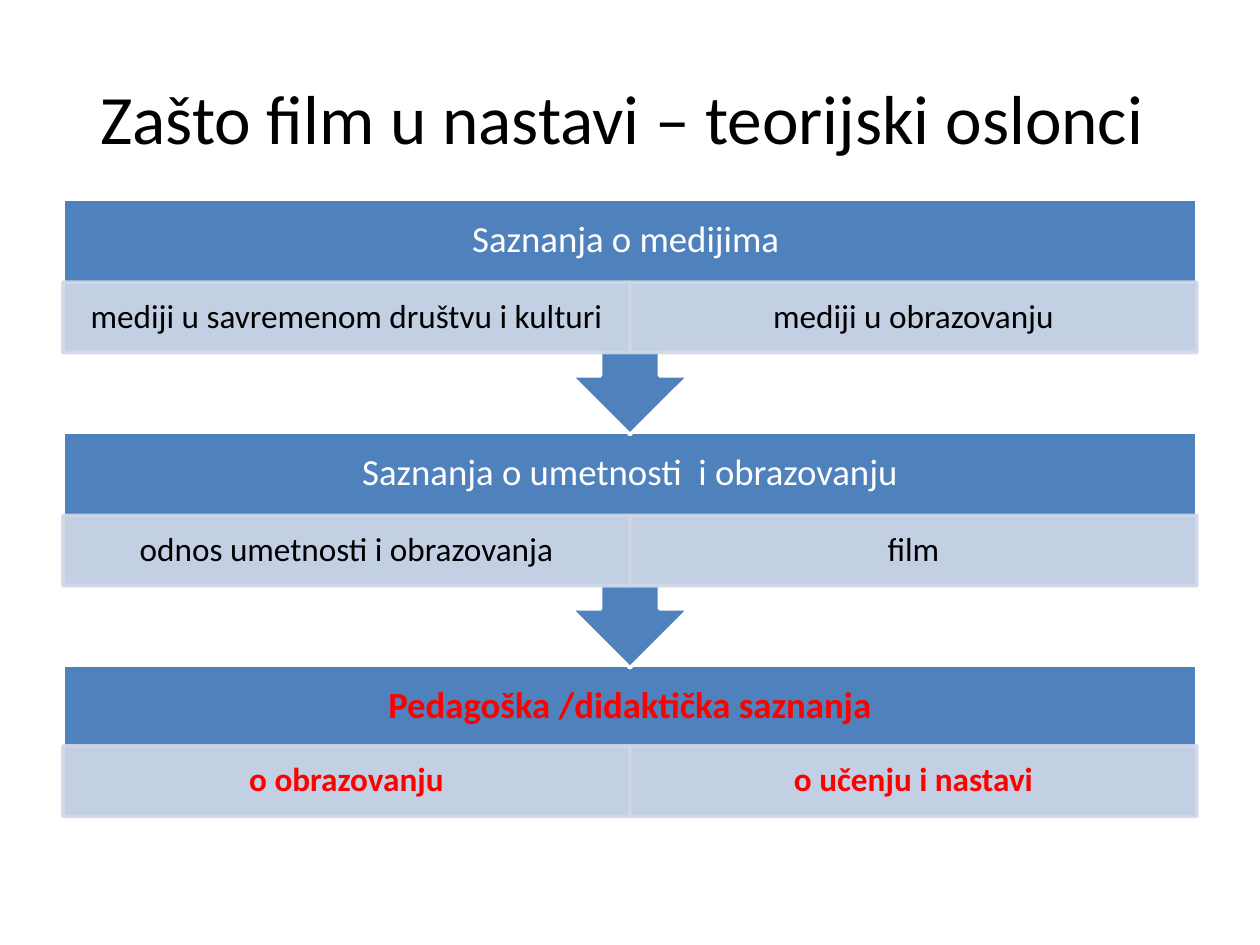
from dataclasses import dataclass

import lxml.etree
import pptx
import pptx.dml.color
import pptx.enum.shapes
import pptx.enum.text
import pptx.oxml.ns
import pptx.util

Inches = pptx.util.Inches
RGBColor = pptx.dml.color.RGBColor
MSO_SHAPE = pptx.enum.shapes.MSO_SHAPE

BLUE = RGBColor(0x4F, 0x81, 0xBD)
PALE_BLUE = RGBColor(0xD0, 0xD8, 0xE8)
WHITE = RGBColor(0xFF, 0xFF, 0xFF)
BLACK = RGBColor(0, 0, 0)
RED = RGBColor(0xFF, 0, 0)

SLIDE_WIDTH, SLIDE_HEIGHT = 10, 7.5
MARGIN = 0.05 * SLIDE_WIDTH
CONTENT_WIDTH = SLIDE_WIDTH - 2 * MARGIN
FIRST_STAGE_TOP, STAGE_PITCH = 1.58, 1.85
HEADING_HEIGHT, TOPIC_HEIGHT = 0.66, 0.56


@dataclass
class Stage:
    heading: str
    topics: tuple[str, ...]
    final: bool = False


STAGES = [
    Stage("Saznanja o medijima ",
          ("mediji u savremenom društvu i kulturi", "mediji u obrazovanju")),
    Stage("Saznanja o umetnosti  i obrazovanju",
          ("odnos umetnosti i obrazovanja", "film")),
    Stage("Pedagoška /didaktička saznanja",
          ("o obrazovanju", "o učenju i nastavi"), final=True),
]


def write(shape, text: str, *, size: float, color: RGBColor, bold: bool = False,
          inset: tuple[float, float] = (0.1, 0.05), spacing: float = 0.9) -> None:
    """Write one centred paragraph; inset is (horizontal, vertical) in inches."""
    frame = shape.text_frame
    frame.word_wrap = True
    frame.vertical_anchor = pptx.enum.text.MSO_ANCHOR.MIDDLE
    frame.margin_left = frame.margin_right = Inches(inset[0])
    frame.margin_top = frame.margin_bottom = Inches(inset[1])
    paragraph = frame.paragraphs[0]
    paragraph.alignment = pptx.enum.text.PP_ALIGN.CENTER
    paragraph.line_spacing = spacing
    run = paragraph.add_run()
    run.text = text
    run.font.name = "Calibri"
    run.font.size = pptx.util.Pt(size)
    run.font.bold = bold
    run.font.color.rgb = color


def add_textbox(slide, left: float, top: float, width: float, height: float):
    return slide.shapes.add_textbox(*map(Inches, (left, top, width, height)))


def add_block(slide, kind, left: float, top: float, width: float, height: float,
              *, fill: RGBColor, line: RGBColor, opacity: int = 100):
    block = slide.shapes.add_shape(kind, *map(Inches, (left, top, width, height)))
    block.shadow.inherit = False
    block.fill.solid()
    block.fill.fore_color.rgb = fill
    block.line.color.rgb = line
    block.line.width = pptx.util.Pt(2)
    if opacity < 100:
        qn = pptx.oxml.ns.qn
        for color in block.element.spPr.iter(qn("a:srgbClr")):
            lxml.etree.SubElement(color, qn("a:alpha"), val=str(opacity * 1000))
    return block


def draw_stage(slide, stage: Stage, top: float) -> None:
    kind, height = ((MSO_SHAPE.RECTANGLE, 1.21) if stage.final
                    else (MSO_SHAPE.UP_ARROW_CALLOUT, 1.87))
    panel = add_block(slide, kind, MARGIN, top, CONTENT_WIDTH, height,
                      fill=BLUE, line=WHITE)
    panel.rotation = 0 if stage.final else 180

    heading = add_textbox(slide, MARGIN, top, CONTENT_WIDTH, HEADING_HEIGHT)
    write(heading, stage.heading, size=21, color=RED if stage.final else WHITE,
          bold=stage.final, inset=(0.16, 0.16))

    topics_top = top + (0.64 if stage.final else HEADING_HEIGHT)
    topic_width = CONTENT_WIDTH / len(stage.topics)
    for column, topic in enumerate(stage.topics):
        cell = add_block(slide, MSO_SHAPE.RECTANGLE, MARGIN + column * topic_width,
                         topics_top, topic_width, TOPIC_HEIGHT,
                         fill=PALE_BLUE, line=PALE_BLUE, opacity=90)
        write(cell, topic, size=19, color=RED if stage.final else BLACK,
              bold=stage.final, inset=(0.15, 0.03))


def main() -> None:
    presentation = pptx.Presentation()
    presentation.slide_width = Inches(SLIDE_WIDTH)
    presentation.slide_height = Inches(SLIDE_HEIGHT)
    slide = presentation.slides.add_slide(presentation.slide_layouts[6])

    title = add_textbox(slide, MARGIN, 0.04 * SLIDE_HEIGHT, CONTENT_WIDTH, 1.25)
    write(title, "Zašto film u nastavi – teorijski oslonci ", size=39.6,
          color=BLACK, spacing=1.0)

    # Later stages go behind, so each arrow tip overlaps the stage below it.
    for row, stage in reversed(list(enumerate(STAGES))):
        draw_stage(slide, stage, FIRST_STAGE_TOP + row * STAGE_PITCH)

    presentation.save("out.pptx")


if __name__ == "__main__":
    main()
